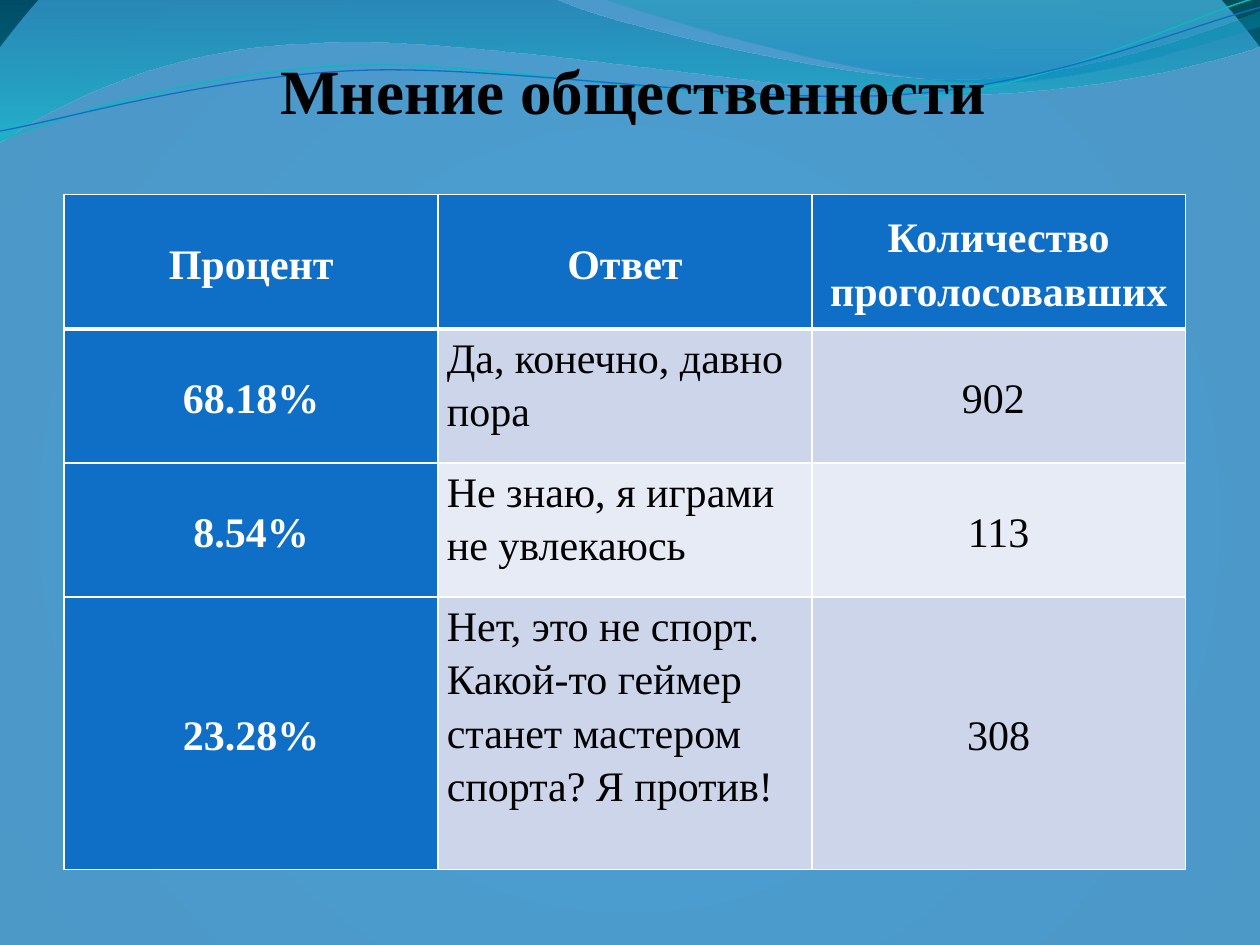
"""Builds a slide with a poll table under a wavy header."""
import math
import pptx
import pptx.dml.color
import pptx.enum.text
import pptx.oxml
import pptx.oxml.ns
import pptx.util
from dataclasses import dataclass


@dataclass(frozen=True)
class Theme:
    font: str = "Times New Roman"
    title_size: int = 36
    cell_size: int = 24
    blue: str = "0F6FC6"
    teal: str = "0AB8BF"
    white: str = "FFFFFF"
    black: str = "000000"
    bands: tuple = ("CCD5EA", "E7EBF5")
    sky: tuple = ((0, "4AA0D6", 100), (100, "4C98C7", 100), (100, "002C38", 100))
    deep_wave: tuple = ((0, "0074A1", 45), (100, "00C6CF", 55))
    light_wave: tuple = ((0, "00A1A9", 30), (80, "008BBF", 45))


theme = Theme()
Color = pptx.dml.color.RGBColor.from_string
namespace = pptx.oxml.ns.nsdecls("a")
qualified = pptx.oxml.ns.qn


def set_gradient(element, stops, direction):
    """Replace the gradient inside an element with the given stops."""
    marks = "".join(
        f'<a:gs pos="{place * 1000}"><a:srgbClr val="{color}">'
        f'<a:alpha val="{alpha * 1000}"/></a:srgbClr></a:gs>'
        for place, color, alpha in stops)
    gradient = element.find(".//" + qualified("a:gradFill"))
    gradient.getparent().replace(gradient, pptx.oxml.parse_xml(
        f'<a:gradFill {namespace} rotWithShape="1"><a:gsLst>{marks}</a:gsLst>{direction}</a:gradFill>'))


def add_curve(slide, start, segments, closed):
    """Draw straight (2 numbers) and cubic (6 numbers) segments as a freeform."""
    corners = [
        tuple(pptx.util.Inches(value) for value in segment[place:place + 2])
        for segment in segments for place in range(0, len(segment), 2)]
    builder = slide.shapes.build_freeform(*(pptx.util.Inches(value) for value in start))
    builder.add_line_segments(corners, close=closed)
    shape = builder.convert_to_shape()
    shape.shadow.inherit = False
    steps = iter(list(shape._element.iter(qualified("a:lnTo"))))
    for segment in segments:
        step = next(steps)
        if len(segment) == 6:
            curve = pptx.oxml.parse_xml(f"<a:cubicBezTo {namespace}/>")
            step.addprevious(curve)
            for control in (step, next(steps), next(steps)):
                curve.append(control[0])
                control.getparent().remove(control)
    return shape


presentation = pptx.Presentation()
presentation.slide_width = width = pptx.util.Inches(10)
presentation.slide_height = height = pptx.util.Inches(7.5)
slide = presentation.slides.add_slide(presentation.slide_layouts[6])

slide.background.fill.gradient()
set_gradient(slide._element, theme.sky,
             '<a:path path="circle"><a:fillToRect l="10000" t="110000" r="10000" b="100000"/></a:path>')

waves = (
    (theme.deep_wave, (0, 0), (
        (4.4, -0.01), (4.76, 0.17, 6.64, 0.63, 7.58, 0.63), (8.53, 0.63, 9.58, 0.26, 10, 0.09),
        (10.01, 0.36), (9.83, 0.44, 8.7, 0.76, 7.46, 0.75), (6.22, 0.75, 3.82, 0.28, 2.57, 0.34),
        (1.29, 0.36, 0.46, 0.83, -0.01, 1.13), (0, 0))),
    (theme.light_wave, (4.79, -0.01), (
        (5.09, 0.11, 6.82, 0.62, 7.69, 0.65), (8.56, 0.69, 9.61, 0.32, 10, 0.21),
        (10, 0), (4.79, -0.01))),
)
for stops, start, segments in waves:
    shape = add_curve(slide, start, segments, True)
    shape.fill.gradient()
    set_gradient(shape._element, stops, '<a:lin ang="5400000" scaled="0"/>')
    shape.line.fill.background()

tilt = 357.3
cosine, sine = math.cos(math.radians(-tilt)), math.sin(math.radians(-tilt))
strands = (
    (theme.teal, 0.85, (4.99, 0.58), (
        (0, 1.11), (0.48, 0.93, 1.58, 0.57, 2.77, 0.52), (3.95, 0.47, 5.93, 0.89, 7.13, 0.8),
        (8.33, 0.71, 9.38, 0.15, 9.98, -0.02))),
    (theme.blue, 0.75, (5, 0.59), (
        (0, 1.04), (0.47, 0.96, 1.64, 0.61, 2.83, 0.56), (4.03, 0.51, 5.97, 0.84, 7.17, 0.75),
        (8.36, 0.67, 9.41, 0.21, 10, 0.06))),
)
for color, weight, (middle_x, middle_y), segments in strands:
    level = [
        tuple(value for x, y in zip(segment[::2], segment[1::2]) for value in (
            middle_x + (x - middle_x) * cosine - (y - middle_y) * sine,
            middle_y + (x - middle_x) * sine + (y - middle_y) * cosine))
        for segment in segments]
    shape = add_curve(slide, level[0], level[1:], False)
    shape.rotation = tilt
    shape.fill.background()
    shape.line.color.rgb = Color(color)
    shape.line.width = pptx.util.Pt(weight)

title = slide.shapes.add_textbox(
    int(width * 0.012), int(height * 0.048), int(width * 0.988), int(height * 0.213))
frame = title.text_frame
frame.word_wrap = True
frame.margin_left = 0
frame.margin_right = pptx.util.Inches(0.07)
paragraph = frame.paragraphs[0]
paragraph.alignment = pptx.enum.text.PP_ALIGN.CENTER
paragraph.space_before = pptx.util.Pt(6)
run = paragraph.add_run()
run.text = "Мнение общественности"
run.font.name = theme.font
run.font.size = pptx.util.Pt(theme.title_size)
run.font.bold = True
run.font.color.rgb = Color(theme.black)

rows = (
    ("Процент", "Ответ", "Количество проголосовавших"),
    ("68.18%", "Да, конечно, давно пора", "902 "),
    ("8.54%", "Не знаю, я играми не увлекаюсь", "113"),
    ("23.28%", "Нет, это не спорт. Какой-то геймер станет мастером спорта? Я против!", "308"),
)
row_heights = [int(height * share) for share in (0.142, 0.142, 0.142, 0.288)]
table_width = int(width * 0.89)
table = slide.shapes.add_table(
    len(rows), 3, int(width * 0.051), int(height * 0.206), table_width, sum(row_heights)).table
table.first_col = True
for column in table.columns:
    column.width = table_width // 3

anchor = pptx.enum.text.MSO_ANCHOR
alignment = pptx.enum.text.PP_ALIGN
for row_index, texts in enumerate(rows):
    table.rows[row_index].height = row_heights[row_index]
    for column_index, text in enumerate(texts):
        cell = table.cell(row_index, column_index)
        heading = row_index == 0 or column_index == 0
        answer = row_index > 0 and column_index == 1
        if row_index == 0:
            for side, weight in (("L", 1), ("R", 1), ("T", 1), ("B", 3)):
                cell._tc.get_or_add_tcPr().append(pptx.oxml.parse_xml(
                    f'<a:ln{side} {namespace} w="{pptx.util.Pt(weight)}"><a:solidFill>'
                    f'<a:srgbClr val="{theme.white}"/></a:solidFill></a:ln{side}>'))
        cell.fill.solid()
        cell.fill.fore_color.rgb = Color(theme.blue if heading else theme.bands[(row_index - 1) % 2])
        cell.margin_left = cell.margin_right = pptx.util.Inches(0.07)
        cell.margin_top = cell.margin_bottom = 0
        cell.vertical_anchor = anchor.TOP if answer else anchor.MIDDLE
        paragraph = cell.text_frame.paragraphs[0]
        paragraph.alignment = alignment.LEFT if answer else alignment.CENTER
        paragraph.line_spacing = 1.15
        run = paragraph.add_run()
        run.text = text
        run.font.name = theme.font
        run.font.size = pptx.util.Pt(theme.cell_size)
        run.font.bold = heading
        run.font.color.rgb = Color(theme.white if heading else theme.black)

presentation.save("out.pptx")
